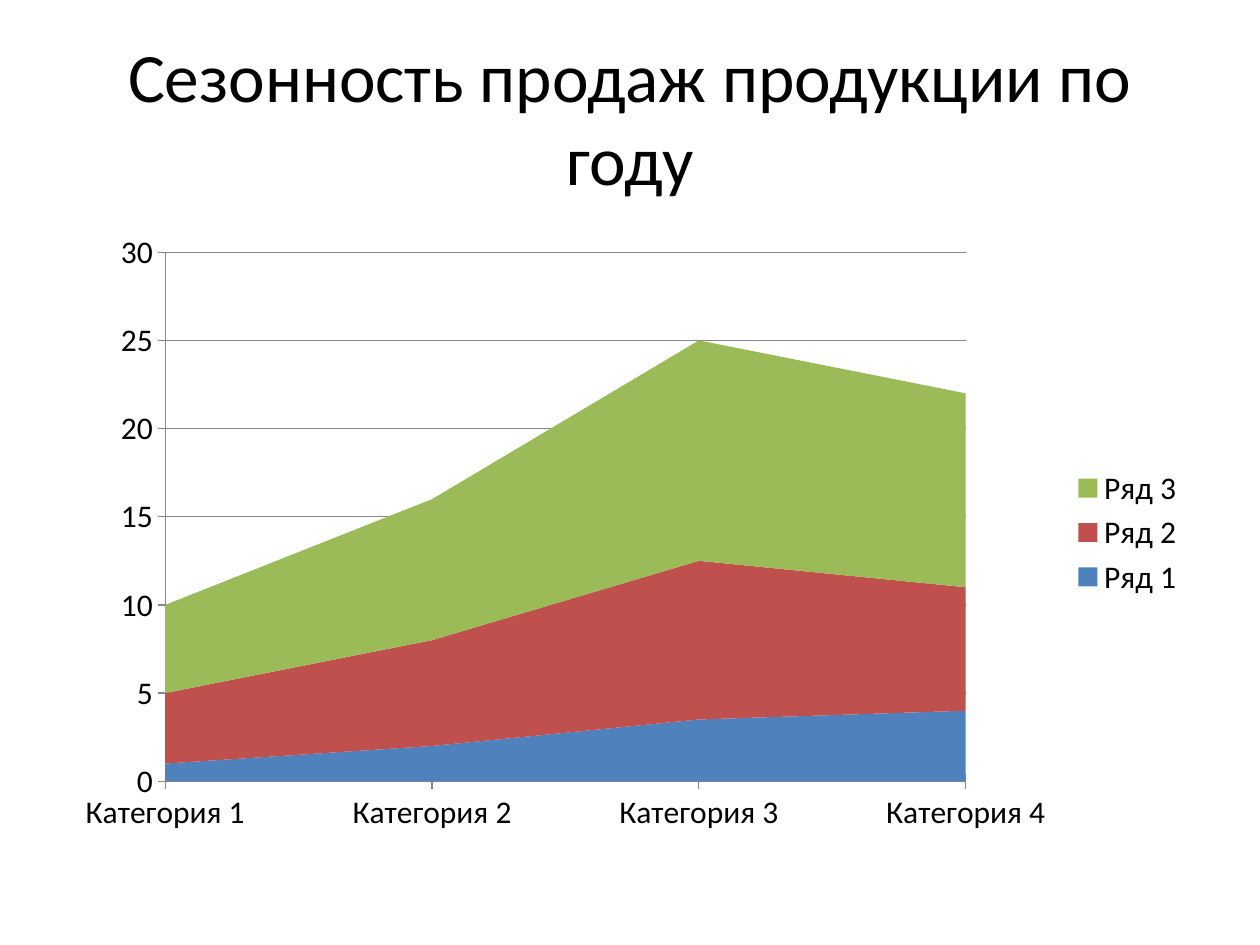
from pptx import Presentation
from pptx.chart.data import CategoryChartData
from pptx.dml.color import RGBColor
from pptx.enum.chart import XL_CHART_TYPE as Kind, XL_LEGEND_POSITION as Side
from pptx.enum.chart import XL_TICK_MARK as Tick
from pptx.enum.text import MSO_ANCHOR as Anchor, PP_ALIGN as Align
from pptx.util import Cm, Pt

SERIES = {
    "Ряд 1": ([1, 2, 3.5, 4], "4F81BD"),
    "Ряд 2": ([4, 6, 9, 7], "C0504D"),
    "Ряд 3": ([5, 8, 12.5, 11], "9BBB59"),
}


def rgb(code):
    return RGBColor.from_string(code)


def put(item, values):
    """Set each named attribute of item."""
    for name, value in values.items():
        setattr(item, name, value)


class Deck:
    face, ink, rule = "Calibri", "000000", "878787"

    def __init__(self, wide, high):
        self.file = Presentation()
        put(self.file, {"slide_width": Cm(wide), "slide_height": Cm(high)})
        self.slide = self.file.slides.add_slide(self.file.slide_layouts[5])

    def style(self, font, size):
        put(font, {"name": self.face, "size": Pt(size)})
        font.color.rgb = rgb(self.ink)

    def title(self, text, left, top, width, height, size):
        box = self.slide.shapes.title
        put(box, {"left": Cm(left), "top": Cm(top),
                  "width": Cm(width), "height": Cm(height)})
        frame = box.text_frame
        frame.text = text
        put(frame, {"word_wrap": True, "vertical_anchor": Anchor.MIDDLE})
        line = frame.paragraphs[0]
        line.alignment = Align.CENTER
        self.style(line.runs[0].font, size)

    def axis(self, axis, grid):
        put(axis, {"has_major_gridlines": grid, "major_tick_mark": Tick.CROSS,
                   "minor_tick_mark": Tick.NONE})
        lines = [axis.format.line]
        if grid:
            lines.append(axis.major_gridlines.format.line)
        for line in lines:
            line.color.rgb = rgb(self.rule)
            line.width = Pt(0.75)

    def areas(self, names, series, left, top, width, height, size):
        data = CategoryChartData()
        data.categories = names
        for name, (values, _) in series.items():
            data.add_series(name, values)
        chart = self.slide.shapes.add_chart(
            Kind.AREA_STACKED, Cm(left), Cm(top), Cm(width), Cm(height), data
        ).chart
        put(chart, {"has_title": False, "has_legend": True})
        put(chart.legend, {"position": Side.RIGHT, "include_in_layout": False})
        self.style(chart.font, size)
        self.axis(chart.category_axis, False)
        self.axis(chart.value_axis, True)
        put(chart.value_axis, {"minimum_scale": 0, "maximum_scale": 30,
                               "major_unit": 5})
        plot = chart.plots[0]
        plot.vary_by_categories = False
        for area, (_, color) in zip(plot.series, series.values()):
            area.format.fill.solid()
            area.format.fill.fore_color.rgb = rgb(color)


def main():
    deck = Deck(25.4, 19.05)
    deck.title("Сезонность продаж продукции по году",
               1.27, 0.76, 22.86, 3.18, 39.6)
    names = [f"Категория {n}" for n in range(1, 5)]
    deck.areas(names, SERIES, 1.27, 4.45, 22.86, 12.57, 18)
    deck.file.save("out.pptx")


if __name__ == "__main__":
    main()
